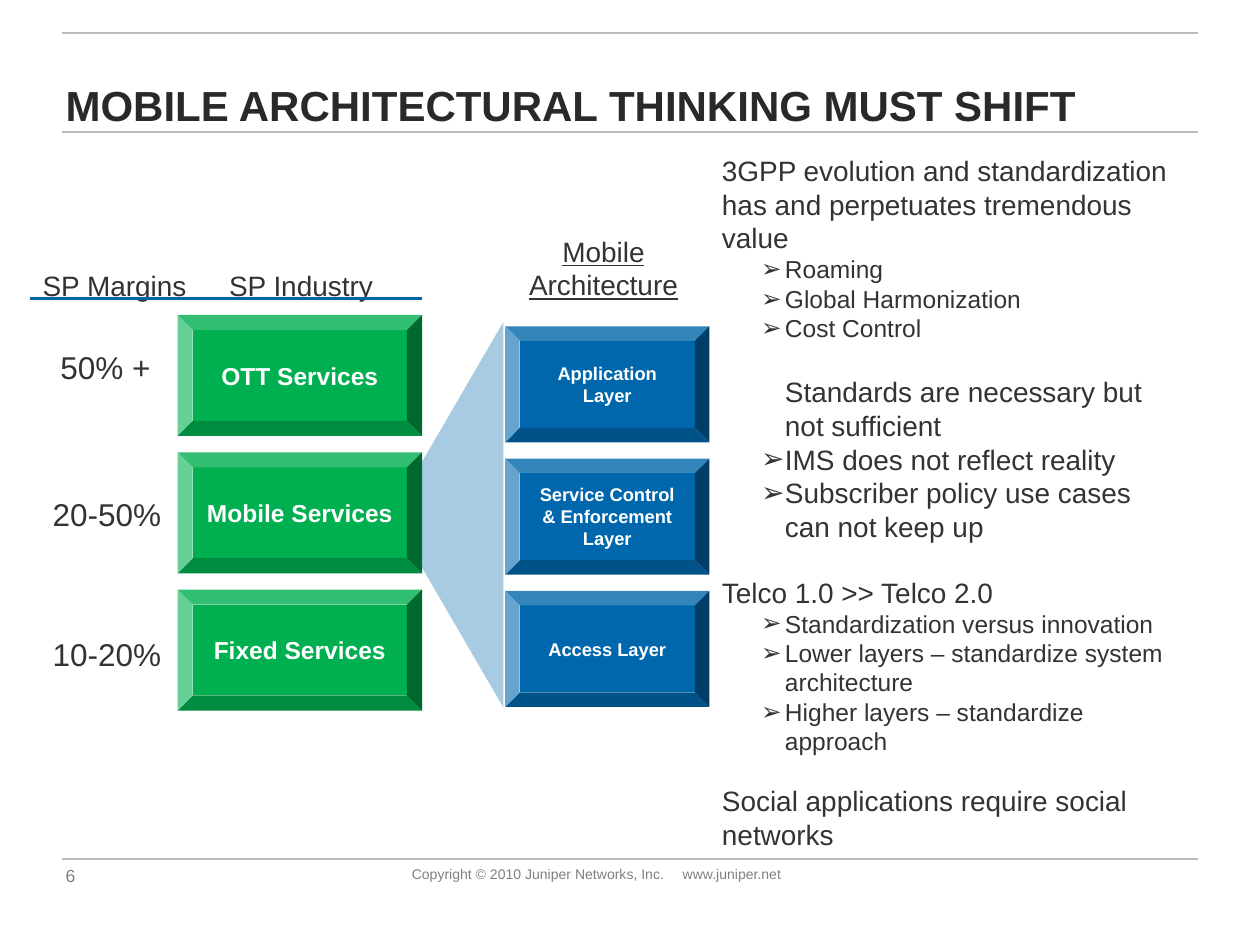
from typing import NamedTuple

import pptx
import pptx.dml.color
import pptx.enum.shapes
import pptx.enum.text
import pptx.oxml
import pptx.oxml.ns
import pptx.util
from pptx.util import Inches

COLORS = {"rule": "BABCBE", "muted": "807F83", "title": "292929", "text": "333333",
          "green": "00B050", "blue": "0067AC", "accent": "0065A8", "white": "FFFFFF"}
SHAPE = pptx.enum.shapes.MSO_SHAPE
ALIGN = pptx.enum.text.PP_ALIGN
ANCHOR = pptx.enum.text.MSO_ANCHOR
NO_FIT = pptx.enum.text.MSO_AUTO_SIZE.NONE


class Label(NamedTuple):
    text: str
    left: float
    top: float
    width: float
    height: float
    size: float = 16
    color: str = "text"
    underline: bool = False
    align: ALIGN = ALIGN.LEFT


class Rule(NamedTuple):
    left: float
    right: float
    y: float
    color: str = "rule"
    weight: float = 1


class Stack(NamedTuple):
    names: list[str]
    left: float
    top: float
    width: float
    height: float
    pitch: float
    color: str
    size: float


class Point(NamedTuple):
    text: str
    size: float
    indent: float = 0
    bullet: bool = False
    before: float = 0


def rgb(name: str) -> pptx.dml.color.RGBColor:
    return pptx.dml.color.RGBColor.from_string(COLORS[name])


def add_xml(parent, tag: str, content: str = "", **attrs: str) -> None:
    pairs = "".join(f' {key}="{value}"' for key, value in attrs.items())
    parent.append(pptx.oxml.parse_xml(
        f'<a:{tag} {pptx.oxml.ns.nsdecls("a")}{pairs}>{content}</a:{tag}>'))


def format_font(p, size: float, color: str, bold: bool = False, underline: bool = False) -> None:
    for r in p.runs:
        r.font.name = "Arial"
        r.font.size = pptx.util.Pt(size)
        r.font.bold = bold
        r.font.underline = underline
        r.font.color.rgb = rgb(color)


def place(sp, left: float, top: float, width: float, height: float) -> None:
    sp.left, sp.top = Inches(left), Inches(top)
    sp.width, sp.height = Inches(width), Inches(height)


def add_label(s, label: Label):
    sp = s.shapes.add_textbox(Inches(label.left), Inches(label.top),
                              Inches(label.width), Inches(label.height))
    tf = sp.text_frame
    tf.word_wrap = False
    tf.text = label.text
    for p in tf.paragraphs:
        p.alignment = label.align
        format_font(p, label.size, label.color, underline=label.underline)
    return tf


def add_rule(s, rule: Rule) -> None:
    line = s.shapes.add_connector(pptx.enum.shapes.MSO_CONNECTOR.STRAIGHT, Inches(rule.left),
                                  Inches(rule.y), Inches(rule.right), Inches(rule.y))
    line.line.color.rgb = rgb(rule.color)
    line.line.width = pptx.util.Pt(rule.weight)
    add_xml(line._element.spPr, "effectLst")


def add_filled(s, kind: SHAPE, left: float, top: float, width: float, height: float,
               color: str, adjust: float):
    sp = s.shapes.add_shape(kind, Inches(left), Inches(top), Inches(width), Inches(height))
    sp.adjustments[0] = adjust
    sp.shadow.inherit = False
    sp.fill.solid()
    sp.fill.fore_color.rgb = rgb(color)
    sp.line.fill.background()
    return sp


def add_stack(s, stack: Stack) -> None:
    for i, name in enumerate(stack.names):
        sp = add_filled(s, SHAPE.BEVEL, stack.left, stack.top + i * stack.pitch,
                        stack.width, stack.height, stack.color, 0.125)
        tf = sp.text_frame
        tf.word_wrap = True
        tf.vertical_anchor = ANCHOR.MIDDLE
        tf.text = name
        p = tf.paragraphs[0]
        p.alignment = ALIGN.CENTER
        format_font(p, stack.size, "white", bold=True)


def add_expansion(s) -> None:
    sp = add_filled(s, SHAPE.TRAPEZOID, 2.14, 3.76, 3.06, 0.65, "blue", 1.72)
    sp.rotation = 270
    color = sp._element.spPr.find(".//" + pptx.oxml.ns.qn("a:srgbClr"))
    add_xml(color, "alpha", val="34000")


def prepare_placeholder(sp, anchor: ANCHOR):
    tf = sp.text_frame
    tf.auto_size = NO_FIT
    tf.word_wrap = True
    tf.vertical_anchor = anchor
    tf.margin_left = 0
    tf.margin_top = tf.margin_bottom = Inches(0.05)
    tf.margin_right = Inches(0.1)
    return tf


def fill_title(sp, text: str) -> None:
    place(sp, 0.52, 0.28, 8.99, 0.81)
    tf = prepare_placeholder(sp, ANCHOR.BOTTOM)
    tf.text = text
    p = tf.paragraphs[0]
    p.alignment = ALIGN.LEFT
    p.line_spacing = 0.9
    p.space_after = pptx.util.Pt(5.3)
    format_font(p, 24, "title", bold=True)


def fill_body(sp, points: list[Point]) -> None:
    place(sp, 5.73, 1.17, 3.67, 5.38)
    tf = prepare_placeholder(sp, ANCHOR.TOP)
    for i, point in enumerate(points):
        p = tf.add_paragraph() if i else tf.paragraphs[0]
        p.text = point.text
        p.level = 1 if point.indent else 0
        pPr = p._p.get_or_add_pPr()
        pPr.set("marL", str(Inches(point.indent)))
        pPr.set("indent", str(Inches(-0.19 if point.bullet else 0)))
        if point.bullet:
            add_xml(pPr, "buFont", typeface="Arial")
            add_xml(pPr, "buChar", char="➢")
        else:
            add_xml(pPr, "buNone")
        p.space_before = pptx.util.Pt(point.before)
        format_font(p, point.size, "text")


def main() -> None:
    prs = pptx.Presentation()
    prs.slide_width, prs.slide_height = Inches(10), Inches(7.5)
    s = prs.slides.add_slide(prs.slide_layouts[1])

    for y in (6.82, 1.05, 0.26):
        add_rule(s, Rule(0.49, 9.51, y))
    tf = add_label(s, Label("6", 0.52, 6.81, 0.58, 0.22, 10, "muted"))
    tf.margin_left = tf.margin_top = tf.margin_right = tf.margin_bottom = 0
    tf.vertical_anchor = ANCHOR.BOTTOM
    tf = add_label(s, Label("Copyright © 2010 Juniper Networks, Inc.\twww.juniper.net",
                            3.17, 6.82, 3.16, 0.24, 8, "muted"))
    tf.word_wrap = True
    add_xml(tf.paragraphs[0]._p.get_or_add_pPr(), "tabLst",
            f'<a:tab pos="{Inches(2.15)}" algn="l"/>')

    fill_title(s.shapes.title, "MOBILE ARCHITECTURAL THINKING MUST SHIFT")
    add_stack(s, Stack(["OTT Services", "Mobile Services", "Fixed Services"],
                       1.41, 2.5, 1.94, 0.96, 1.09, "green", 14))
    for label in (
        Label("50% +", 0.38, 2.71, 0.92, 0.4, 18),
        Label("20-50%", 0.32, 3.88, 1.07, 0.4, 18),
        Label("10-20%", 0.32, 4.99, 1.07, 0.4, 18),
        Label("SP Margins", 0.24, 2.08, 1.36, 0.37, underline=True),
        Label("SP Industry", 1.72, 2.08, 1.36, 0.37, underline=True),
        Label("Mobile\nArchitecture", 4.09, 1.81, 1.4, 0.64, underline=True, align=ALIGN.CENTER),
    ):
        add_label(s, label)
    add_rule(s, Rule(0.24, 3.35, 2.37, "accent", 1.25))
    add_expansion(s)
    add_stack(s, Stack(["Application Layer", "Service Control & Enforcement Layer", "Access Layer"],
                       4.01, 2.59, 1.62, 0.92, 1.05, "blue", 10.5))

    fill_body(s.placeholders[1], [
        Point("3GPP evolution and standardization has and perpetuates tremendous value", 16),
        *(Point(text, 14, 0.5, True)
          for text in ("Roaming", "Global Harmonization", "Cost Control")),
        Point("Standards are necessary but not sufficient", 16, 0.5, before=18.4),
        *(Point(text, 16, 0.5, True) for text in (
            "IMS does not reflect reality", "Subscriber policy use cases can not keep up")),
        Point("Telco 1.0 >> Telco 2.0", 16, before=18.4),
        *(Point(text, 14, 0.5, True) for text in (
            "Standardization versus innovation", "Lower layers – standardize system architecture",
            "Higher layers – standardize approach")),
        Point("Social applications require social networks", 16, before=16.1),
    ])
    prs.save("out.pptx")


if __name__ == "__main__":
    main()
